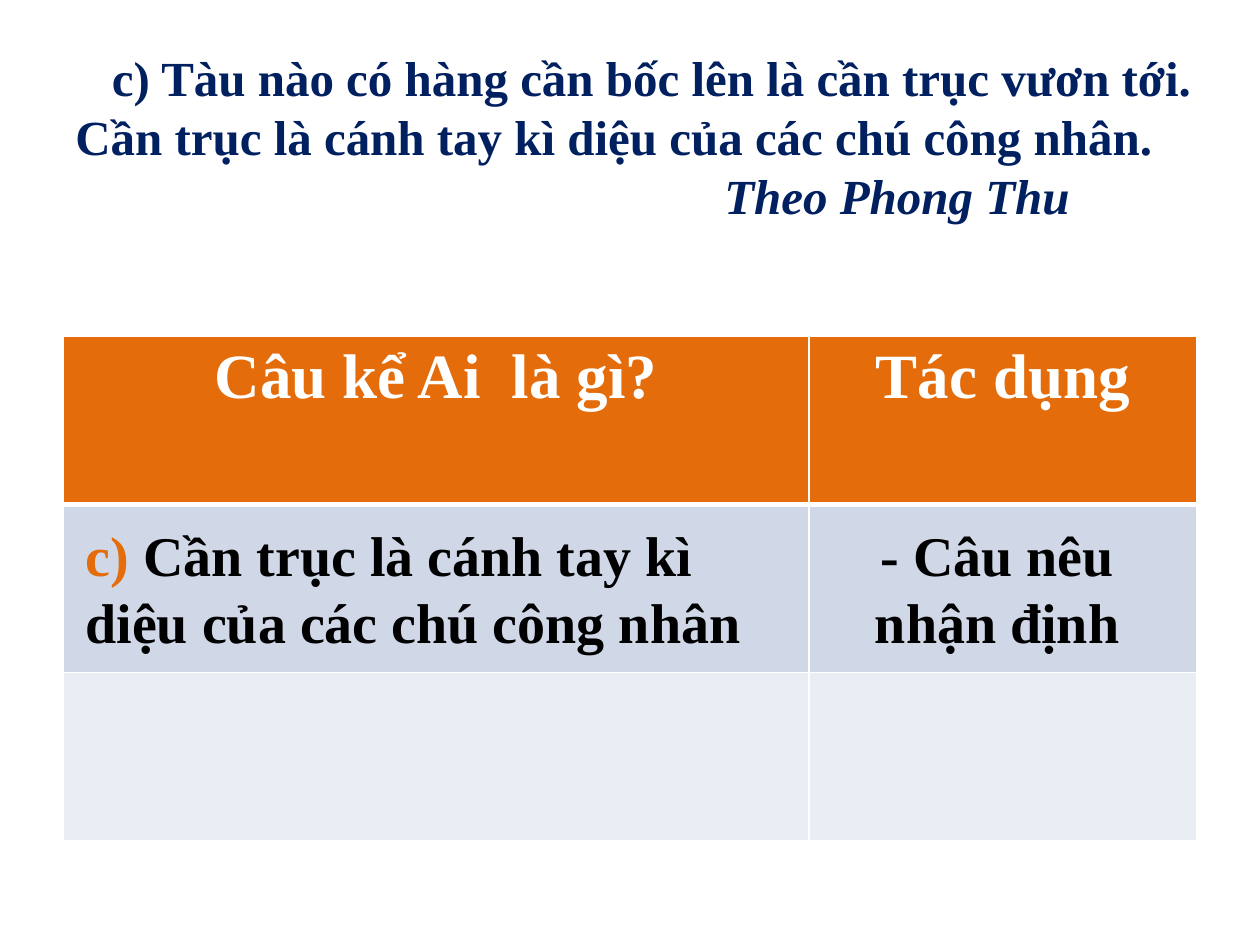
from lxml import etree
from pptx import Presentation
from pptx import util as u
from pptx.dml.color import RGBColor
from pptx.enum import text
from pptx.oxml.ns import qn

NAVY = RGBColor(0x00, 0x20, 0x60)
ORANGE = RGBColor(0xE4, 0x6C, 0x0A)
BLACK = RGBColor(0, 0, 0)
WHITE = RGBColor(0xFF, 0xFF, 0xFF)
ROW_FILLS = [ORANGE, RGBColor(0xD0, 0xD8, 0xE8), RGBColor(0xE9, 0xED, 0xF4)]

HEADERS = ["Câu kể Ai  là gì?", "Tác dụng"]
COL_WIDTHS = [5.92, 3.08]
CENTER = text.PP_ALIGN.CENTER


def add_run(p, words, size, color, **extra):
    r = p.add_run()
    r.text = words
    r.font.color.rgb = color
    font = {"name": "Times New Roman", "size": u.Pt(size), "bold": True, **extra}
    for name, value in font.items():
        setattr(r.font, name, value)


def add_text(slide, box, size, paragraphs):
    """Each paragraph is (alignment, left margin, first-line indent, runs)."""
    sp = slide.shapes.add_textbox(*map(u.Inches, box))
    tf = sp.text_frame
    tf.word_wrap = True
    for i, (align, margin, indent, runs) in enumerate(paragraphs):
        p = tf.add_paragraph() if i else tf.paragraphs[0]
        p.alignment = align
        pPr = p._p.get_or_add_pPr()
        for name, value in {"marL": margin, "indent": indent}.items():
            pPr.set(name, str(u.Inches(value)))
        for words, color, extra in runs:
            add_run(p, words, size, color, **extra)


def set_borders(cell, widths):
    tcPr = cell._tc.get_or_add_tcPr()
    for side, width in widths.items():
        ln = etree.SubElement(tcPr, qn(f"a:ln{side}"), w=str(u.Pt(width)))
        fill = etree.SubElement(ln, qn("a:solidFill"))
        etree.SubElement(fill, qn("a:srgbClr"), val=str(WHITE))


def add_grid(slide):
    box = map(u.Inches, (0.5, 2.67, 9, 4))
    table = slide.shapes.add_table(len(ROW_FILLS), len(HEADERS), *box).table
    for col, width in zip(table.columns, COL_WIDTHS):
        col.width = u.Inches(width)
    for i, color in enumerate(ROW_FILLS):
        for j in range(len(HEADERS)):
            cell = table.cell(i, j)
            # A thick rule separates the header from the body
            set_borders(cell, {"L": 1, "R": 1, "T": 3 if i == 1 else 1,
                               "B": 3 if i == 0 else 1})
            cell.fill.solid()
            cell.fill.fore_color.rgb = color
    for j, words in enumerate(HEADERS):
        p = table.cell(0, j).text_frame.paragraphs[0]
        p.alignment = CENTER
        add_run(p, words, 36, WHITE)


def main():
    prs = Presentation()
    prs.slide_width, prs.slide_height = u.Inches(10), u.Inches(7.5)
    slide = prs.slides.add_slide(prs.slide_layouts[6])

    # Table of sentences and their use
    add_grid(slide)

    # Answers over the second row
    add_text(slide, (0.58, 4.08, 5.5, 1.72), 32, [
        (None, 0, 0, [("c) ", ORANGE, {}),
                      ("Cần trục là cánh tay kì diệu của các chú công nhân", BLACK, {})])])
    add_text(slide, (6.58, 4.08, 2.67, 1.18), 32, [
        (CENTER, 0, 0, [("- Câu nêu nhận định", BLACK, {})])])

    # Passage and its author
    passage = ("c) Tàu nào có hàng cần bốc lên là cần trục vươn tới. "
               "Cần trục là cánh tay kì diệu của các chú công nhân.")
    add_text(slide, (0.5, 0.33, 9.25, 2.69), 28, [
        (None, 0, 0.29, [(passage, NAVY, {})]),
        (None, 5.15, 0, [("Theo Phong Thu", NAVY, {"italic": True})])])

    prs.save("out.pptx")


if __name__ == "__main__":
    main()
